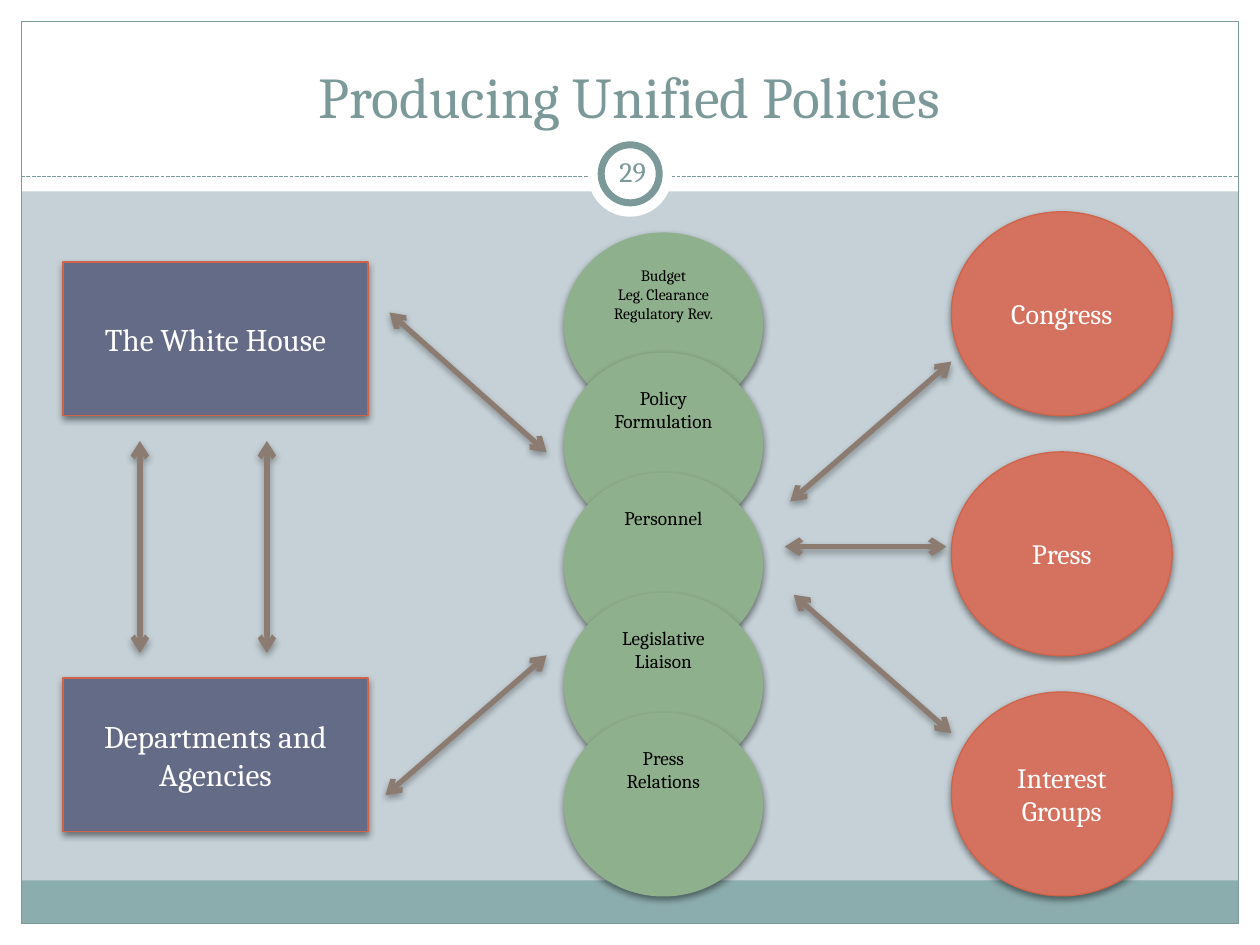
from typing import NamedTuple

from lxml.etree import SubElement
from pptx import Presentation
from pptx.dml.color import RGBColor
from pptx.enum.dml import MSO_LINE
from pptx.enum.shapes import MSO_CONNECTOR, MSO_SHAPE as Geo
from pptx.enum.text import MSO_ANCHOR as Anchor, PP_ALIGN as Align
from pptx.oxml.ns import qn
from pptx.util import Cm, Pt

FONT = "Cambria"
WHITE, BLACK, TEAL, BAND, SKY = "FFFFFF", "000000", "7C999A", "8CADAE", "C5D1D7"
RED, RUST, NAVY, GREEN, BROWN = "D4725F", "D16349", "646B86", "8FB08C", "8C7B70"
WIDE, HIGH, EDGE = 25.4, 19.05, 0.43


class Box(NamedTuple):
    left: float
    top: float
    width: float
    height: float


class Look(NamedTuple):
    geo: Geo
    fill: str
    line: str
    ink: str
    anchor: Anchor = Anchor.MIDDLE


class Node(NamedTuple):
    text: str
    box: Box
    look: Look
    size: float


class Arrow(NamedTuple):
    x1: float
    y1: float
    x2: float
    y2: float


OFFICE = Look(Geo.RECTANGLE, NAVY, RUST, WHITE)
OUTSIDE = Look(Geo.OVAL, RED, RUST, WHITE)
TASK = Look(Geo.OVAL, GREEN, GREEN, BLACK, Anchor.TOP)

OUTER = ["Congress", "Press", "Interest Groups"]
OFFICES = [("The White House", 5.28), ("Departments and Agencies", 13.67)]
TASKS = [
    ("Budget\nLeg. Clearance\nRegulatory Rev.", 9),
    ("Policy Formulation", 11),
    ("Personnel", 11),
    ("Legislative Liaison", 11),
    ("Press Relations", 11),
]
NODES = [
    *(Node(text, Box(19.18, 4.27 + 4.84 * i, 4.45, 4.11), OUTSIDE, 16)
      for i, text in enumerate(OUTER)),
    *(Node(text, Box(1.27, top, 6.15, 3.1), OFFICE, 18) for text, top in OFFICES),
    *(Node(text, Box(11.38, 4.7 + 2.42 * i, 3.99, 3.68), TASK, size)
      for i, (text, size) in enumerate(TASKS)),
]
ARROWS = [
    Arrow(15.93, 10.11, 19.18, 7.29),
    Arrow(19.08, 11.02, 15.82, 11.02),
    Arrow(19.18, 14.78, 16.0, 11.99),
    Arrow(11.02, 9.12, 7.85, 6.3),
    Arrow(7.77, 16.03, 11.02, 13.21),
    *(Arrow(x, 13.16, x, 8.89) for x in (2.82, 5.38)),
]


def rgb(code: str) -> RGBColor:
    return RGBColor.from_string(code)


def cast(item, alpha: int) -> None:
    """Give the item a soft shadow below; zero alpha means no shadow."""
    effects = SubElement(item._element.spPr, qn("a:effectLst"))
    if alpha:
        shade = SubElement(effects, qn("a:outerShdw"), blurRad=str(Pt(4)),
                           dist=str(Pt(2)), dir="5400000", rotWithShape="0")
        ink = SubElement(shade, qn("a:srgbClr"), val=BLACK)
        SubElement(ink, qn("a:alpha"), val=str(alpha * 1000))


def write(frame, text: str, size: float, ink: str, anchor: Anchor) -> None:
    frame.word_wrap = True
    frame.vertical_anchor = anchor
    frame.text = text
    for par in frame.paragraphs:
        par.alignment = Align.CENTER
        par.font.name, par.font.size = FONT, Pt(size)
        par.font.color.rgb = rgb(ink)


def draw(slide, geo: Geo, box: Box, fill: str = "", line: str = "",
         width: float = 0.75, alpha: int = 0):
    shape = slide.shapes.add_shape(geo, *map(Cm, box))
    if fill:
        shape.fill.solid()
        shape.fill.fore_color.rgb = rgb(fill)
    else:
        shape.fill.background()
    if line:
        shape.line.color.rgb = rgb(line)
        shape.line.width = Pt(width)
    else:
        shape.line.fill.background()
    cast(shape, alpha)
    return shape


def rule(slide, ends: Arrow, color: str, width: float, alpha: int = 0):
    line = slide.shapes.add_connector(MSO_CONNECTOR.STRAIGHT, *map(Cm, ends))
    line.line.color.rgb = rgb(color)
    line.line.width = Pt(width)
    cast(line, alpha)
    return line


def frame(slide) -> None:
    """Draw the white margins, the border, the band and the ring."""
    for box in (
        Box(0, HIGH - EDGE, WIDE, EDGE),
        Box(0, 0, WIDE, 3.86),
        Box(0, 0, EDGE, HIGH),
        Box(WIDE - EDGE, 0, EDGE, HIGH),
    ):
        draw(slide, Geo.RECTANGLE, box, WHITE)
    inner = WIDE - 2 * EDGE
    draw(slide, Geo.RECTANGLE, Box(EDGE, 17.75, inner, 0.87), BAND)
    draw(slide, Geo.RECTANGLE, Box(EDGE, EDGE, inner, HIGH - 2 * EDGE), line=TEAL)
    dash = rule(slide, Arrow(EDGE, 3.56, WIDE - EDGE, 3.56), TEAL, 0.75)
    dash.line.dash_style = MSO_LINE.SQUARE_DOT
    draw(slide, Geo.OVAL, Box(11.85, 2.67, 1.7, 1.7), WHITE)
    draw(slide, Geo.OVAL, Box(12.12, 2.92, 1.17, 1.17), WHITE, TEAL, 4)


def head(slide) -> None:
    """Place the title and the page number above the frame."""
    title = slide.shapes.title
    title.left, title.top, title.width, title.height = map(
        Cm, Box(0.84, 0.64, 23.7, 2.11))
    write(title.text_frame, "Producing Unified Policies", 33, TEAL, Anchor.BOTTOM)
    title.element.getparent().append(title.element)

    page = slide.shapes.add_textbox(*map(Cm, Box(12.12, 2.84, 1.27, 1.22))).text_frame
    page.margin_left = page.margin_right = Cm(0.13)
    page.margin_top = page.margin_bottom = Cm(0.13)
    write(page, "29", 16, TEAL, Anchor.MIDDLE)


def place(slide, node: Node) -> None:
    look = node.look
    shape = draw(slide, look.geo, node.box, look.fill, look.line, alpha=45)
    write(shape.text_frame, node.text, node.size, look.ink, look.anchor)


def link(slide, arrow: Arrow) -> None:
    line = rule(slide, arrow, BROWN, 3, 35)
    for end in ("a:headEnd", "a:tailEnd"):
        SubElement(line.line._get_or_add_ln(), qn(end), type="arrow")


def main() -> None:
    deck = Presentation()
    deck.slide_width, deck.slide_height = Cm(WIDE), Cm(HIGH)
    slide = deck.slides.add_slide(deck.slide_layouts[5])
    slide.background.fill.solid()
    slide.background.fill.fore_color.rgb = rgb(SKY)
    frame(slide)
    head(slide)
    for node in NODES:
        place(slide, node)
    for arrow in ARROWS:
        link(slide, arrow)
    deck.save("out.pptx")


if __name__ == "__main__":
    main()
